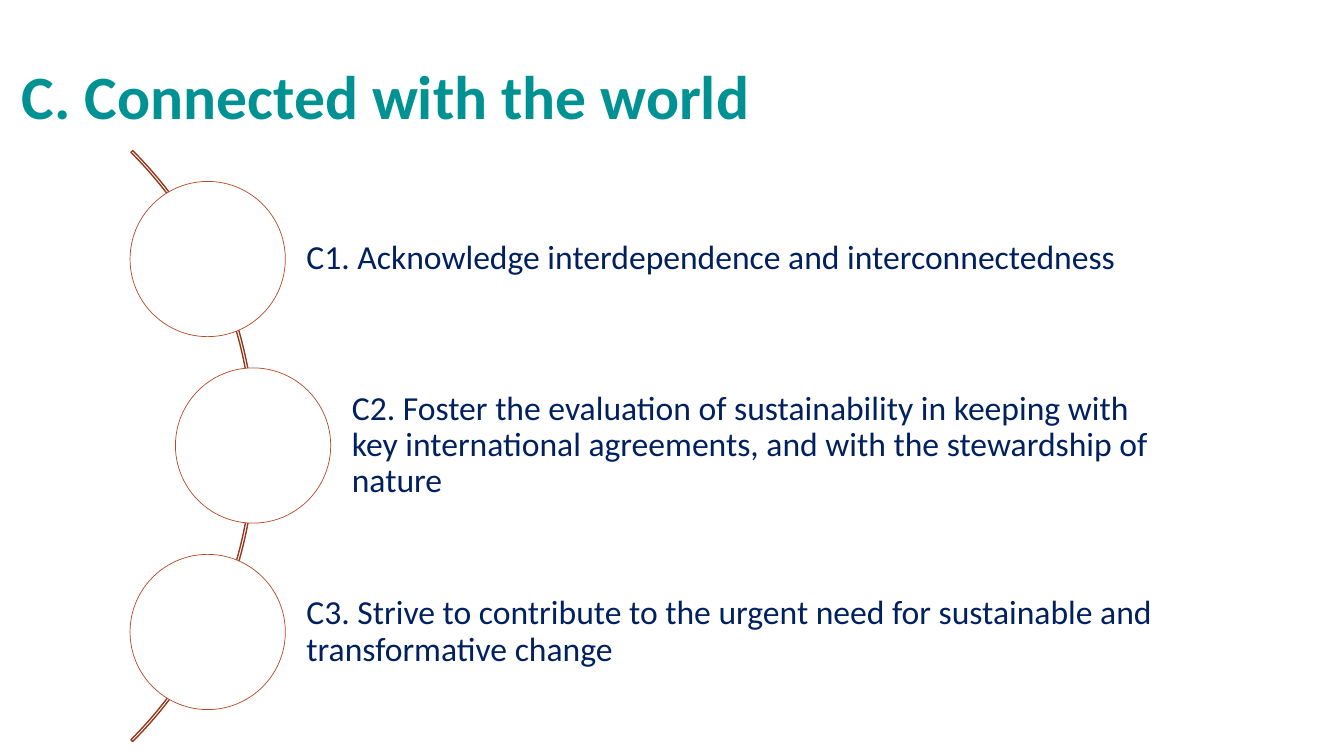
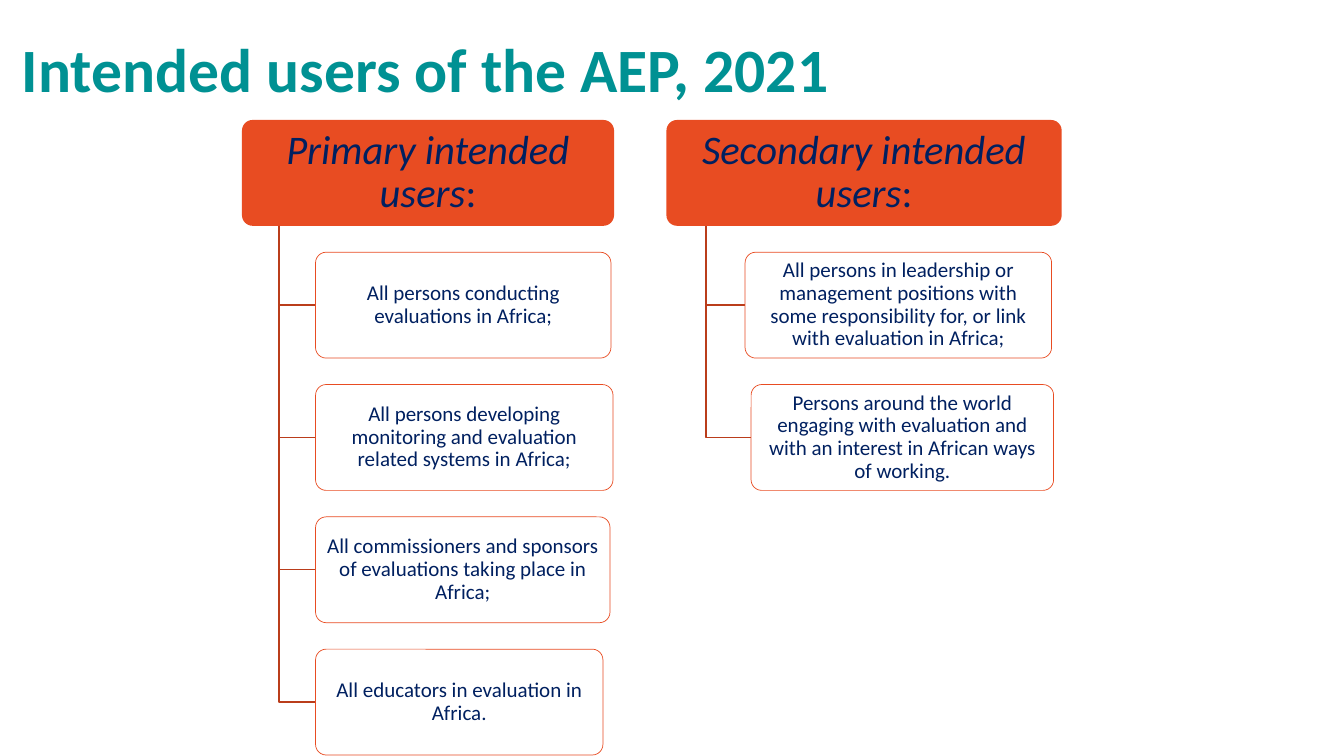
from pptx import Presentation
from pptx.dml.color import RGBColor
from pptx.enum.shapes import MSO_SHAPE
from pptx.enum.text import MSO_ANCHOR, PP_ALIGN
from pptx.util import Inches, Pt

MIDDLE = MSO_ANCHOR.MIDDLE
LEFT, CENTER = PP_ALIGN.LEFT, PP_ALIGN.CENTER
ARC, OVAL, ROUNDED = MSO_SHAPE.BLOCK_ARC, MSO_SHAPE.OVAL, MSO_SHAPE.ROUNDED_RECTANGLE

FONT = "Calibri"
COLORS = {
    "title": "009193", "text": "002060", "white": "FFFFFF", "orange": "E84C22",
    "arc": "923A1E", "circle": "B64926", "branch": "BA3D1B",
}

# Content
WORLD_TITLE = "C. Connected with the world"
PRINCIPLES = [  # circle centre, text
    (2.06, "C1. Acknowledge interdependence and interconnectedness"),
    (2.51, "C2. Foster the evaluation of sustainability in keeping with key "
           "international agreements, and with the stewardship of nature"),
    (2.06, "C3. Strive to contribute to the urgent need for sustainable and "
           "transformative change"),
]
USERS_TITLE = "Intended users of the AEP, 2021"
USER_GROUPS = [  # cards: left, width, text
    {"heading": "Primary intended users", "left": 2.4, "width": 3.69, "cards": [
        (3.13, 2.93, "All persons conducting evaluations in Africa;"),
        (3.13, 2.95, "All persons developing monitoring and evaluation related "
                     "systems in Africa;"),
        (3.13, 2.92, "All commissioners and sponsors of evaluations taking place "
                     "in Africa;"),
        (3.13, 2.85, "All educators in evaluation in Africa."),
    ]},
    {"heading": "Secondary intended users", "left": 6.61, "width": 3.92, "cards": [
        (7.39, 3.04, "All persons in leadership or management positions with some "
                     "responsibility for, or link with evaluation in Africa;"),
        (7.45, 3.0, "Persons around the world engaging with evaluation and with an "
                    "interest in African ways of working."),
    ]},
]


def color(name):
    return RGBColor.from_string(COLORS[name])


def write(shape, text, size, align=LEFT, insets=(0.1, 0.05, 0.1, 0.05),
          name="text", bold=False):
    frame = shape.text_frame
    frame.word_wrap = True
    frame.vertical_anchor = MIDDLE
    (frame.margin_left, frame.margin_top,
     frame.margin_right, frame.margin_bottom) = map(Inches, insets)
    frame.text = text
    paragraph = frame.paragraphs[0]
    paragraph.alignment = align
    paragraph.line_spacing = 0.9
    font = paragraph.font
    font.name, font.size, font.bold = FONT, Pt(size), bold
    font.color.rgb = color(name)
    return paragraph


def style(shape, fill=None, line=None, weight=1):
    shape.shadow.inherit = False
    if fill:
        shape.fill.solid()
        shape.fill.fore_color.rgb = color(fill)
    else:
        shape.fill.background()
    if line:
        shape.line.color.rgb = color(line)
        shape.line.width = Pt(weight)
    else:
        shape.line.fill.background()


def add_shape(slide, kind, left, top, width, height, **look):
    shape = slide.shapes.add_shape(kind, *map(Inches, (left, top, width, height)))
    style(shape, **look)
    return shape


def add_text(slide, left, top, width, height, text, size, **options):
    box = slide.shapes.add_textbox(*map(Inches, (left, top, width, height)))
    write(box, text, size, **options)


def add_slide(presentation, title, title_height):
    slide = presentation.slides.add_slide(presentation.slide_layouts[6])
    add_text(slide, 0.12, 0.26, 11.5, title_height, title, 44,
             name="title", bold=True)
    return slide


def add_branch(slide, x, top, bottom, right):
    """Line down from a heading, then across to a card."""
    builder = slide.shapes.build_freeform(Inches(x), Inches(top))
    builder.add_line_segments(
        [(Inches(x), Inches(bottom)), (Inches(right), Inches(bottom))], close=False)
    style(builder.convert_to_shape(), line="branch")


def build_world(presentation):
    slide = add_slide(presentation, WORLD_TITLE, 1.45)
    arc = add_shape(slide, ARC, -5.76, 0.28, 8.29, 8.29, line="arc")
    for index, value in enumerate((189, 27, 0.003)):
        arc.adjustments[index] = value

    diameter, pitch, text_height, text_right = 1.54, 1.85, 1.23, 11.69
    for index, (center_x, text) in enumerate(PRINCIPLES):
        center_y = 2.57 + index * pitch
        add_text(slide, center_x, center_y - text_height / 2,
                 text_right - center_x, text_height, text, 24,
                 insets=(0.98, 0.07, 0.07, 0.07))
        add_shape(slide, OVAL, center_x - diameter / 2, center_y - diameter / 2,
                  diameter, diameter, fill="white", line="circle", weight=0.5)


def build_users(presentation):
    slide = add_slide(presentation, USERS_TITLE, 0.92)
    top, height = 1.19, 1.05
    pitch = height * 1.25
    for group in USER_GROUPS:
        # Heading: italic words, upright colon
        heading = add_shape(slide, ROUNDED, group["left"], top, group["width"],
                            height, fill="orange")
        heading.adjustments[0] = 0.1
        paragraph = write(heading, group["heading"], 29, CENTER,
                          (0.09, 0.07, 0.09, 0.07))
        paragraph.runs[0].font.italic = True
        paragraph.add_run().text = ":"

        # Cards hanging from the heading
        trunk_x = group["left"] + group["width"] / 10
        for index, (left, width, text) in enumerate(group["cards"], start=1):
            card_top = top + index * pitch
            add_branch(slide, trunk_x, top + height, card_top + height / 2, left)
            card = add_shape(slide, ROUNDED, left, card_top, width, height,
                             fill="white", line="orange", weight=0.5)
            card.adjustments[0] = 0.1
            write(card, text, 15, CENTER, (0.06, 0.05, 0.06, 0.05))


def main():
    presentation = Presentation()
    presentation.slide_width = Inches(13.33)
    presentation.slide_height = Inches(7.5)
    build_world(presentation)
    build_users(presentation)
    presentation.save("out.pptx")


if __name__ == "__main__":
    main()
